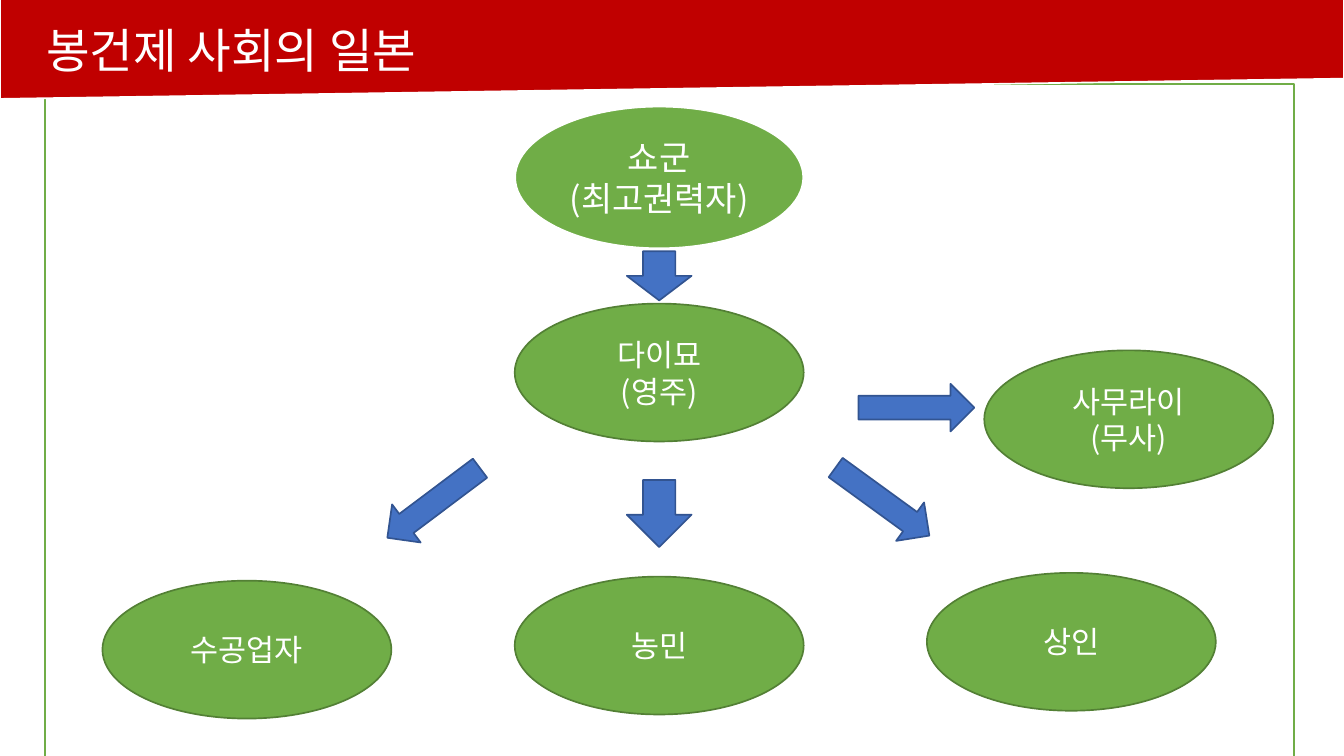
from pptx import Presentation
from pptx.dml.color import RGBColor
from pptx.enum.shapes import MSO_SHAPE
from pptx.enum.text import MSO_ANCHOR, MSO_AUTO_SIZE, PP_ALIGN
from pptx.oxml.ns import qn
from pptx.util import Pt
from lxml.etree import SubElement

FONT = "Noto Sans CJK KR"
WHITE, RED = "FFFFFF", "C00000"
GREEN, DARK_GREEN = "70AD47", "538035"
BLUE, DARK_BLUE = "4472C4", "325491"

PAGE_WIDTH, PAGE_HEIGHT = 793.44, 446.4
TITLE = "봉건제 사회의 일본"
CENTER = 389.2  # axis of the shogun, daimyo and farmer column
CLASS_SIZE = (170.6, 81.4)
SLANTED_SIZE = (68.4, 28.1)

# lines, centre x, centre y, size, font size, outline, outline width
RANKS = [
    (["쇼군", "(최고권력자)"], CENTER, 104.8, (170.6, 84.2), 20, WHITE, 1.5),
]
# lines, centre x, centre y
CLASSES = [
    (["다이묘", "(영주)"], CENTER, 220),
    (["수공업자"], 145.8, 383.6),
    (["농민"], CENTER, 381.2),
    (["상인"], 632.5, 379),
    (["사무라이", "(무사)"], 666.4, 247.6),
]
RANKS += [(*row, CLASS_SIZE, 18, DARK_GREEN, 1) for row in CLASSES]

# kind, centre x, centre y, size, rotation
ARROWS = [
    (MSO_SHAPE.DOWN_ARROW, CENTER, 162.9, (38.2, 29), 0),
    (MSO_SHAPE.DOWN_ARROW, CENTER, 303.2, (38.2, 39.6), 0),
    (MSO_SHAPE.RIGHT_ARROW, 541, 240.7, SLANTED_SIZE, 0),
    (MSO_SHAPE.RIGHT_ARROW, 521, 296.2, SLANTED_SIZE, 36),
    (MSO_SHAPE.RIGHT_ARROW, 256, 297, SLANTED_SIZE, 143.1),
]


def color(value):
    return RGBColor.from_string(value)


def add_figure(page, kind, box, fill, outline, outline_width=1, rotation=0):
    shape = page.shapes.add_shape(kind, *(Pt(length) for length in box))
    shape.shadow.inherit = False
    shape.fill.solid()
    shape.fill.fore_color.rgb = color(fill)
    shape.line.color.rgb = color(outline)
    shape.line.width = Pt(outline_width)
    shape.rotation = rotation
    return shape


def centered(x, y, size):
    """Return left, top, width and height of a box around a centre."""
    width, height = size
    return x - width / 2, y - height / 2, width, height


def write(shape, lines, size, align, anchor):
    frame = shape.text_frame
    frame.text = "\n".join(lines)
    frame.vertical_anchor = anchor
    for para in frame.paragraphs:
        para.alignment = align
        para.font.size = Pt(size)
        para.font.name = FONT
        para.font.color.rgb = color(WHITE)
    for properties in shape.element.iter(qn("a:defRPr")):
        SubElement(properties, qn("a:ea"), typeface=FONT)


def main():
    deck = Presentation()
    deck.slide_width, deck.slide_height = Pt(PAGE_WIDTH), Pt(PAGE_HEIGHT)
    page = deck.slides.add_slide(deck.slide_layouts[5])

    add_figure(page, MSO_SHAPE.RECTANGLE, (26.6, 49.7, 737.3, 398.9), WHITE, GREEN)
    banner = add_figure(page, MSO_SHAPE.FLOWCHART_MANUAL_INPUT,
                        (0, -1.4, PAGE_WIDTH, 59.8), RED, WHITE, rotation=180)

    title = page.shapes.title
    title.left, title.top, title.width, title.height = Pt(20.2), Pt(8.6), Pt(250.6), Pt(41)
    write(title, [TITLE], 28, PP_ALIGN.LEFT, MSO_ANCHOR.TOP)
    title.text_frame.word_wrap = False
    title.text_frame.auto_size = MSO_AUTO_SIZE.SHAPE_TO_FIT_TEXT
    banner.element.addnext(title.element)  # the title sits on the banner

    for lines, x, y, size, font_size, outline, outline_width in RANKS:
        ellipse = add_figure(page, MSO_SHAPE.OVAL, centered(x, y, size),
                             GREEN, outline, outline_width)
        write(ellipse, lines, font_size, PP_ALIGN.CENTER, MSO_ANCHOR.MIDDLE)
        ellipse.text_frame.word_wrap = True

    for kind, x, y, size, rotation in ARROWS:
        add_figure(page, kind, centered(x, y, size), BLUE, DARK_BLUE, rotation=rotation)

    deck.save("out.pptx")


if __name__ == "__main__":
    main()
